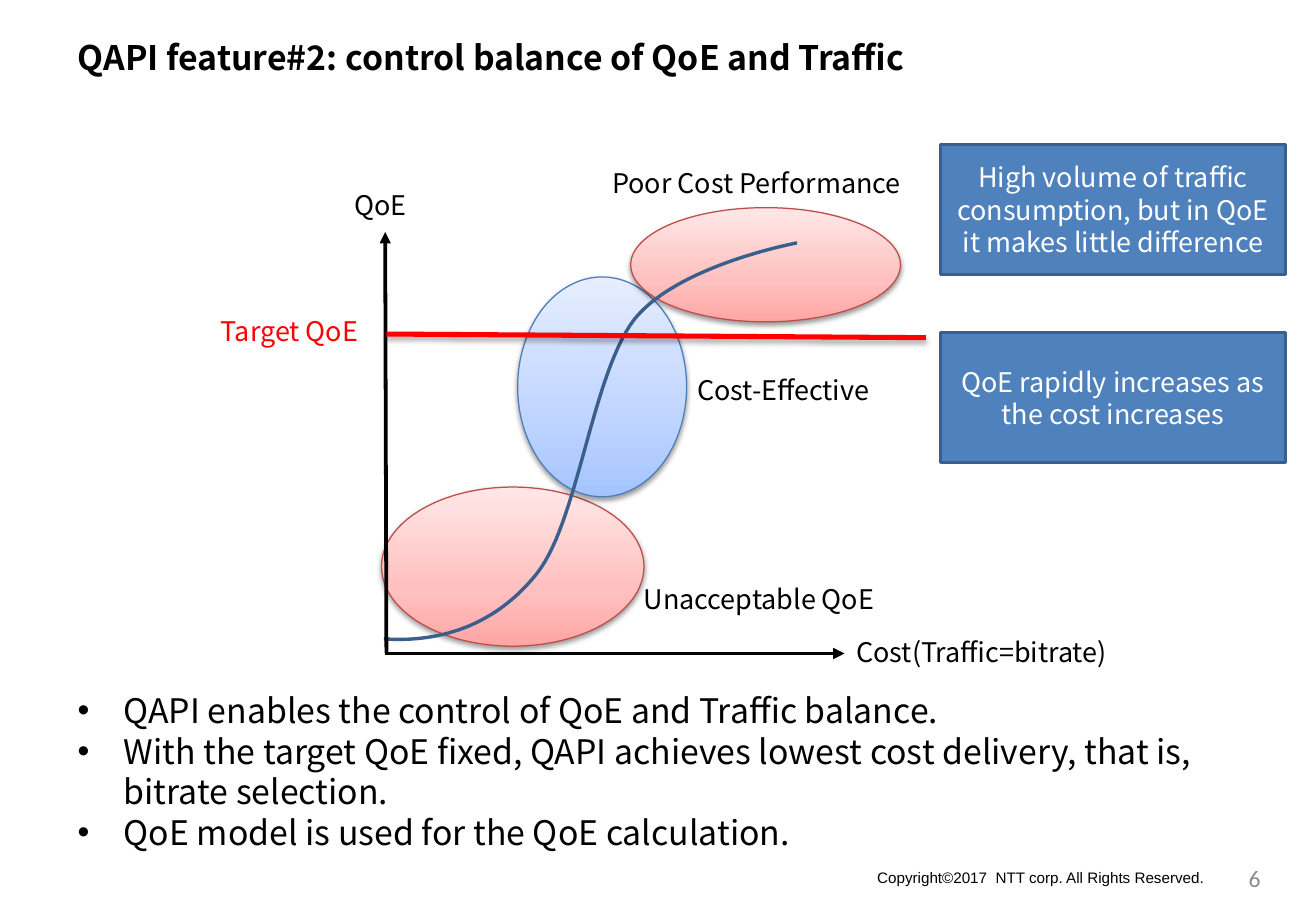
from lxml import etree
from pptx import Presentation
from pptx.dml import color
from pptx.enum import shapes, text
from pptx.oxml import ns
from pptx.util import Inches, Pt

FONT = "Noto Sans CJK JP"
BLACK = "000000"
STEEL = "3A5F8C"


def rgb(value):
    return color.RGBColor.from_string(value)


def write(shape, content, size=16, font=FONT, ink=BLACK, bold=False, align="LEFT",
          anchor="TOP", wrap=True, grow=False, bullet=None):
    frame = shape.text_frame
    frame.word_wrap = wrap
    frame.vertical_anchor = getattr(text.MSO_ANCHOR, anchor)
    frame.auto_size = text.MSO_AUTO_SIZE.SHAPE_TO_FIT_TEXT if grow else text.MSO_AUTO_SIZE.NONE
    for index, line in enumerate(content.split("\n")):
        paragraph = frame.add_paragraph() if index else frame.paragraphs[0]
        paragraph.alignment = getattr(text.PP_ALIGN, align)
        if bullet:
            properties = paragraph._p.get_or_add_pPr()
            properties.set("marL", str(Inches(0.38)))
            properties.set("indent", str(Inches(-0.38)))
            etree.SubElement(properties, ns.qn("a:buFont")).set("typeface", "Arial")
            etree.SubElement(properties, ns.qn("a:buChar")).set("char", bullet)
        paragraph.line_spacing = Pt(size * 1.2)
        run = paragraph.add_run()
        run.text = line
        run.font.size = Pt(size)
        run.font.name = font
        run.font.bold = bold
        run.font.color.rgb = rgb(ink)


deck = Presentation()
deck.slide_width = Inches(10.83)
deck.slide_height = Inches(7.5)
slide = deck.slides.add_slide(deck.slide_layouts[5])

title = slide.shapes.title
title.left, title.top, title.width, title.height = map(Inches, (0.54, 0.25, 8.86, 0.44))
write(title, "QAPI feature#2: control balance of QoE and Traffic", size=20, bold=True)

effects = []
red_zone = ("FFA6A5", "FFC0BF", "FFE7E7"), "BF4C48"
blue_zone = ("A4C4FF", "BFD4FF", "E6EEFF"), "4B7EBC"
for box, (shades, edge) in [
    ((3.14, 4.01, 2.16, 1.31), red_zone),
    ((4.26, 2.28, 1.39, 1.81), blue_zone),
    ((5.19, 1.71, 2.22, 0.94), red_zone),
]:
    zone = slide.shapes.add_shape(shapes.MSO_SHAPE.OVAL, *map(Inches, box))
    zone.fill.gradient()
    zone.fill.gradient_angle = 90
    stops = zone._element.spPr.find(".//" + ns.qn("a:gsLst"))
    stops.clear()
    for position, shade in zip((0, 35, 100), shades):
        stop = etree.SubElement(stops, ns.qn("a:gs"), pos=str(position * 1000))
        etree.SubElement(stop, ns.qn("a:srgbClr"), val=shade)
    zone.line.color.rgb = rgb(edge)
    zone.line.width = Pt(0.75)
    effects.append((zone, 38, 1.6))

curve_points = [(3.16, 5.26)]
for bend in [
    ((3.61, 5.29), (4.07, 5.16), (4.42, 4.72)),
    ((4.76, 4.29), (4.87, 3.09), (5.22, 2.63)),
    ((5.58, 2.18), (6.56, 2), (6.56, 2)),
]:
    controls = (curve_points[-1], *bend)
    for step in range(1, 31):
        t = step / 30
        weights = ((1 - t) ** 3, 3 * t * (1 - t) ** 2, 3 * t ** 2 * (1 - t), t ** 3)
        curve_points.append(tuple(
            sum(w * point[axis] for w, point in zip(weights, controls)) for axis in (0, 1)))
curve_emu = [(Inches(x), Inches(y)) for x, y in curve_points]
builder = slide.shapes.build_freeform(*curve_emu[0])
builder.add_line_segments(curve_emu[1:], close=False)
qoe_curve = builder.convert_to_shape()
qoe_curve.shadow.inherit = False
qoe_curve.fill.background()
qoe_curve.line.color.rgb = rgb(STEEL)
qoe_curve.line.width = Pt(2)

for ends, ink, width, is_axis in [
    ((3.17, 5.38, 6.95, 5.38), BLACK, 2.25, True),
    ((3.18, 5.38, 3.17, 1.91), BLACK, 2.25, True),
    ((3.18, 2.75, 7.62, 2.78), "FF0000", 3, False),
]:
    rule = slide.shapes.add_connector(shapes.MSO_CONNECTOR.STRAIGHT, *map(Inches, ends))
    rule.line.color.rgb = rgb(ink)
    rule.line.width = Pt(width)
    if is_axis:
        etree.SubElement(rule.line._get_or_add_ln(), ns.qn("a:tailEnd"), type="triangle")
    effects.append((rule, 0 if is_axis else 35, 1.8))

for item, opacity, distance in effects:
    effect_list = etree.SubElement(item._element.spPr, ns.qn("a:effectLst"))
    if opacity:
        shadow = etree.SubElement(
            effect_list, ns.qn("a:outerShdw"), blurRad=str(Pt(3.1)), dist=str(Pt(distance)),
            dir=str(90 * 60000), rotWithShape="0")
        shade = etree.SubElement(shadow, ns.qn("a:srgbClr"), val=BLACK)
        etree.SubElement(shade, ns.qn("a:alpha"), val=str(opacity * 1000))

for label, left, top, width, ink in [
    ("Cost(Traffic=bitrate)", 6.95, 5.18, 2.44, BLACK),
    ("QoE", 2.82, 1.5, 0.65, BLACK),
    ("Poor Cost Performance", 4.94, 1.32, 2.71, BLACK),
    ("Cost-Effective", 5.64, 3.03, 1.71, BLACK),
    ("Unacceptable QoE", 5.2, 4.75, 2.19, BLACK),
    ("Target QoE", 1.72, 2.54, 1.41, "FF0000"),
]:
    caption = slide.shapes.add_textbox(*map(Inches, (left, top, width, 0.37)))
    write(caption, label, ink=ink, wrap=False, grow=True)

summary = slide.shapes.add_textbox(*map(Inches, (0.54, 5.63, 9.69, 1.45)))
write(summary, "QAPI enables the control of QoE and Traffic balance.\n"
      "With the target QoE fixed, QAPI achieves lowest cost delivery, that is, bitrate selection.\n"
      "QoE model is used for the QoE calculation.", size=20, bullet="•")

for top, remark in [
    (1.19, "High volume of traffic consumption, but in QoE it makes little difference"),
    (2.74, "QoE rapidly increases as the cost increases"),
]:
    callout = slide.shapes.add_shape(
        shapes.MSO_SHAPE.RECTANGLE, *map(Inches, (7.74, top, 2.84, 1.07)))
    callout.shadow.inherit = False
    callout.fill.solid()
    callout.fill.fore_color.rgb = rgb("4F81BD")
    callout.line.color.rgb = rgb(STEEL)
    callout.line.width = Pt(2)
    write(callout, remark, ink="FFFFFF", align="CENTER", anchor="MIDDLE")

rights = slide.shapes.add_textbox(*map(Inches, (7.12, 7.1, 2.92, 0.25)))
write(rights, "Copyright©2017  NTT corp. All Rights Reserved.", size=9, font="Arial",
      wrap=False, grow=True)
page_number = slide.shapes.add_textbox(*map(Inches, (10.05, 7.03, 0.55, 0.4)))
write(page_number, "6", size=14, font="Calibri", ink="8C8C8C", align="CENTER", anchor="MIDDLE")

deck.save("out.pptx")
